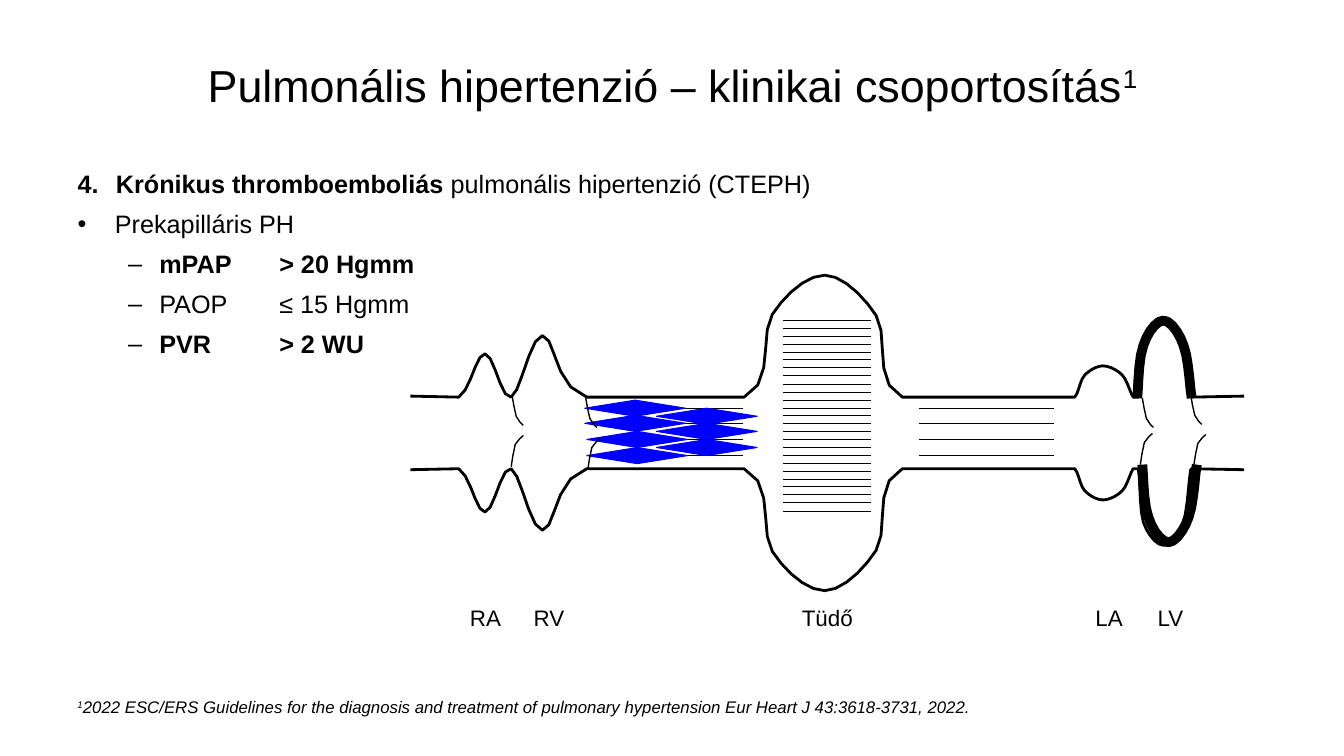
from lxml.etree import SubElement
from pptx import Presentation
from pptx.dml.color import RGBColor
from pptx.enum.shapes import MSO_CONNECTOR as Connector, MSO_SHAPE as Shape
from pptx.enum.text import MSO_AUTO_SIZE as AutoSize, PP_ALIGN as Align
from pptx.oxml.ns import qn
from pptx.util import Pt

PX = 9144  # 100 px to the inch
BLACK = RGBColor(0, 0, 0)
BLUE = RGBColor(0, 0, 255)

deck = Presentation()
deck.slide_width, deck.slide_height = 1333 * PX, 750 * PX
slide = deck.slides.add_slide(deck.slide_layouts[1])
shapes = slide.shapes


def write(paragraph, text, size, bold=False, italic=False, raised=False):
    run = paragraph.add_run()
    run.text = text
    look = {"name": "Arial", "size": Pt(size), "bold": bold, "italic": italic}
    for key, value in look.items():
        setattr(run.font, key, value)
    run.font.color.rgb = BLACK
    if raised:
        run._r.get_or_add_rPr().set("baseline", "30000")


def trace(segments, weight, steps):
    """Draw an open outline; pairs are straight, sixes are Bezier curves."""
    points = [segments[0]]
    for segment in segments[1:]:
        if len(segment) == 2:
            points.append(segment)
            continue
        corners = [points[-1], segment[:2], segment[2:4], segment[4:]]
        for step in range(1, steps + 1):
            t = step / steps
            weights = ((1 - t) ** 3, 3 * t * (1 - t) ** 2, 3 * t * t * (1 - t), t ** 3)
            points.append(tuple(sum(w * c[axis] for w, c in zip(weights, corners))
                                for axis in (0, 1)))
    points = [(round(x * PX), round(y * PX)) for x, y in points]
    builder = shapes.build_freeform(*points[0])
    builder.add_line_segments(points[1:], close=False)
    outline = builder.convert_to_shape()
    outline.fill.background()
    outline.line.color.rgb = BLACK
    outline.line.width = Pt(weight)
    outline.shadow.inherit = False


# Title
title = shapes.title
title.left, title.top, title.width, title.height = 67 * PX, 21 * PX, 1200 * PX, 125 * PX
heading = title.text_frame.paragraphs[0]
heading.alignment = Align.CENTER
write(heading, "Pulmonális hipertenzió – klinikai csoportosítás", 32)
write(heading, "1", 32, raised=True)

# Definition list: level, left margin, hanging indent, bullet, runs
criteria = slide.placeholders[1]
criteria.left, criteria.top, criteria.width, criteria.height = (
    67 * PX, 162 * PX, 939 * PX, 449 * PX)
criteria.text_frame.auto_size = AutoSize.NONE
items = [
    (0, 38, 38, None, [("Krónikus thromboemboliás ", True),
                       ("pulmonális hipertenzió (CTEPH)", False)]),
    (0, 37, 37, "•", [("Prekapilláris PH", False)]),
    (1, 81, 31, "–", [("mPAP\t> 20 Hgmm", True)]),
    (1, 81, 31, "–", [("PAOP\t≤ 15 Hgmm", False)]),
    (1, 81, 31, "–", [("PVR\t> 2 WU", True)]),
]
for number, (level, margin, hanging, bullet, runs) in enumerate(items):
    frame = criteria.text_frame
    item = frame.add_paragraph() if number else frame.paragraphs[0]
    item.level = level
    item.space_before, item.space_after = Pt(1), Pt(6)
    properties = item._p.get_or_add_pPr()
    indents = {"marL": margin, "indent": -hanging, "defTabSz": 100}
    for key, value in indents.items():
        properties.set(key, str(value * PX))
    SubElement(properties, qn("a:buFont"), typeface="Arial")
    if bullet:
        SubElement(properties, qn("a:buChar"), char=bullet)
    else:
        SubElement(properties, qn("a:buAutoNum"), type="arabicPeriod", startAt="4")
    for text, bold in runs:
        write(item, text, 18, bold=bold)

# Source line
source = shapes.add_textbox(67 * PX, 686 * PX, 1214 * PX, 30 * PX)
source.text_frame.word_wrap = True
citation = source.text_frame.paragraphs[0]
write(citation, "1", 12, italic=True, raised=True)
write(citation, "2022 ESC/ERS Guidelines for the diagnosis and treatment of pulmonary "
      "hypertension Eur Heart J 43:3618-3731, 2022.", 12, italic=True)

# Labels under the circulation
for name, left, width in [("RA", 456, 51), ("RV", 519, 51), ("Tüdő", 785, 71),
                          ("LA", 1076, 48), ("LV", 1138, 46)]:
    label = shapes.add_textbox(left * PX, 594 * PX, width * PX, 37 * PX)
    label.text_frame.word_wrap = False
    label.text_frame.paragraphs[0].alignment = Align.CENTER
    write(label.text_frame.paragraphs[0], name, 16)

# Upper wall of the circulation, then its mirror image below
wall = [
    (407, 393), (455, 394),
    (467, 387, 472, 351, 481, 351), (490, 351, 497, 397, 507, 394),
    (516, 391, 526, 333, 538, 333), (551, 333, 549, 384, 582, 394),
    (738, 394),
    (769, 380, 753, 332, 766, 312), (779, 292, 800, 273, 818, 273),
    (835, 273, 856, 293, 869, 313), (882, 333, 865, 380, 895, 394),
    (1066, 394),
    (1070, 390, 1071, 377, 1076, 372), (1081, 367, 1088, 363, 1094, 363),
    (1100, 363, 1108, 367, 1113, 372), (1118, 377, 1121, 390, 1124, 394),
    (1129, 394),
    (1131, 385, 1130, 354, 1134, 341), (1138, 329, 1147, 318, 1154, 318),
    (1160, 317, 1169, 326, 1173, 339), (1178, 351, 1179, 384, 1181, 393),
    (1182, 394), (1234, 393),
]
ventricle = [
    (1128, 395),
    (1129, 386, 1129, 356, 1134, 343), (1138, 330, 1147, 318, 1154, 318),
    (1161, 318, 1170, 331, 1174, 343), (1179, 356, 1180, 384, 1182, 395),
]
for part, weight, shift, mirror in [(wall, 2, 0, 859), (ventricle, 7, 5, 856)]:
    trace(part, weight, 5)
    trace([tuple(mirror - v if i % 2 else v + shift for i, v in enumerate(segment))
           for segment in part], weight, 5)

# Flow lines: lung capillaries on every level, vessels on every second one
levels = [round(318 + i * 189 / 24) for i in range(25)]
vessel_levels = levels[11:18:2]
for left, right, rows in [(604, 737, vessel_levels), (777, 864, levels),
                          (911, 1045, vessel_levels)]:
    for y in rows:
        flow = shapes.add_connector(Connector.STRAIGHT, left * PX, y * PX, right * PX, y * PX)
        flow.line.color.rgb = BLACK
        flow.line.width = Pt(0.75)
        SubElement(flow._element.spPr, qn("a:effectLst"))

# Thrombi in the pulmonary artery
for left, level in [(582, 16), (582, 14), (580, 12), (651, 13),
                    (580, 10), (651, 11), (651, 15)]:
    thrombus = shapes.add_shape(Shape.FLOWCHART_DECISION, left * PX, levels[level] * PX,
                                100 * PX, 16 * PX)
    thrombus.fill.solid()
    thrombus.fill.fore_color.rgb = BLUE
    thrombus.line.color.rgb = BLUE
    thrombus.line.width = Pt(0.75)
    thrombus.shadow.inherit = False

# Valve leaflets
upper_leaflet = [(0, 0), (1, 3, 2, 15, 4, 20), (6, 25, 10, 28, 11, 29)]
lower_leaflet = [(0, 0), (1, -4, 2, -17, 4, -22), (6, -27, 11, -29, 12, -31)]
for leaflet, hinges in [
    (upper_leaflet, [(508, 393), (581, 395), (1133, 395), (1181, 392)]),
    (lower_leaflet, [(507, 463), (583, 466), (1131, 461), (1184, 462)]),
]:
    for hinge in hinges:
        trace([tuple(v + hinge[i % 2] for i, v in enumerate(segment))
               for segment in leaflet], 1, 2)

deck.save("out.pptx")
